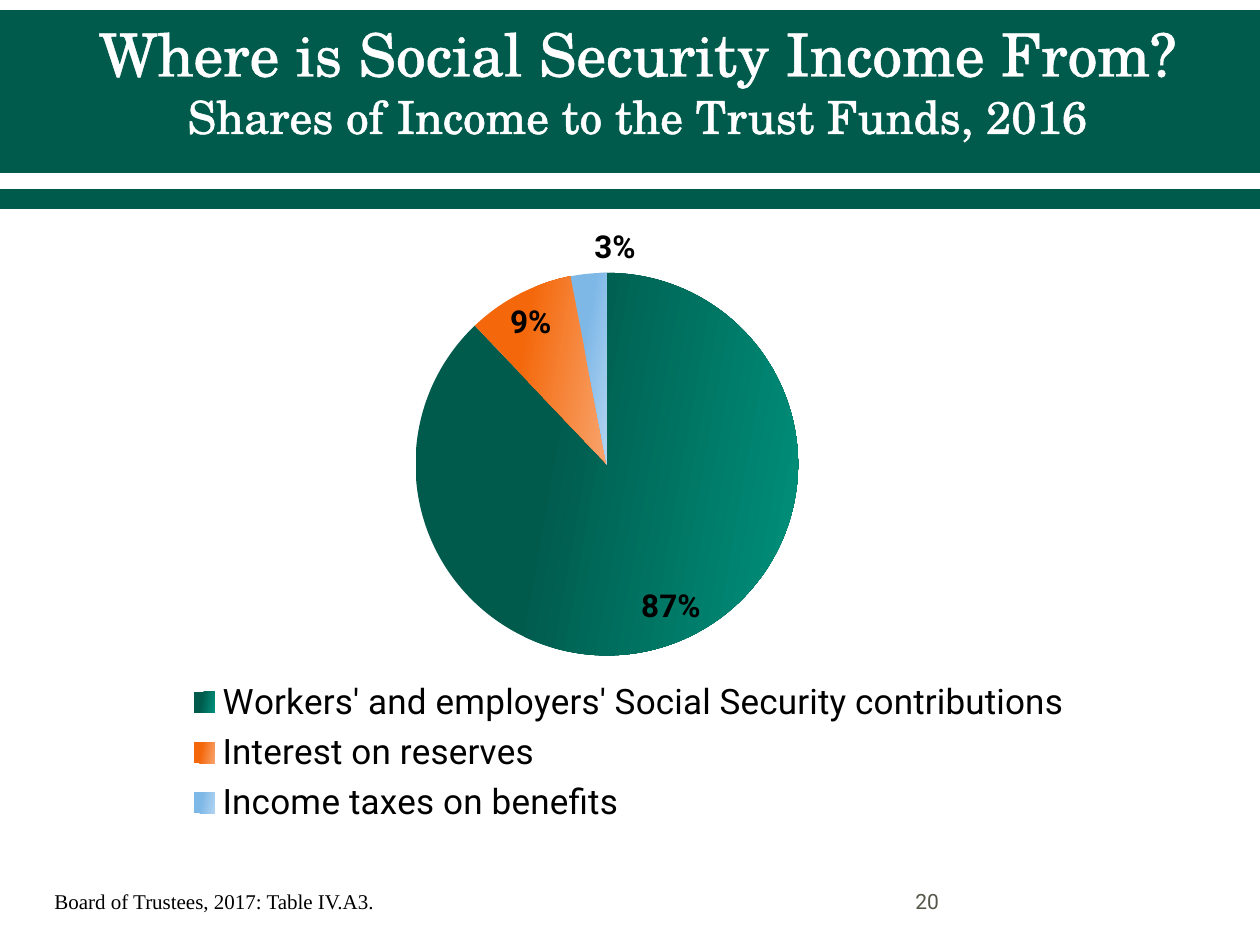
from lxml import etree
from pptx import Presentation, util as u
from pptx.chart.data import CategoryChartData
from pptx.dml.color import RGBColor
from pptx.enum import chart as charts, shapes, text
from pptx.oxml import parse_xml
from pptx.oxml.ns import nsdecls, qn

SCALE = 914400 / 126
GREEN = RGBColor(0x00, 0x5B, 0x4D)
LIGHT_GREEN = RGBColor(0x00, 0x92, 0x7D)
ORANGE = RGBColor(0xF4, 0x68, 0x0B)
LIGHT_ORANGE = RGBColor(0xF8, 0xA4, 0x6D)
BLUE = RGBColor(0x7E, 0xB8, 0xE7)
LIGHT_BLUE = RGBColor(0xB2, 0xD4, 0xF1)
WHITE = RGBColor(0xFF, 0xFF, 0xFF)
BLACK = RGBColor(0x00, 0x00, 0x00)
GREY = RGBColor(0x55, 0x55, 0x4A)
HEADING, BODY, SOURCE = "TeX Gyre Schola", "Roboto", "Times New Roman"


def px(*lengths):
    return [u.Emu(round(length * SCALE)) for length in lengths]


def style(font, size, color, name, bold=False):
    font.size, font.name, font.bold = u.Pt(size), name, bold
    font.color.rgb = color


def place(parent, index, values, inner=False):
    for layout in parent.findall(qn("c:layout")):
        parent.remove(layout)
    parts = '<c:layoutTarget val="inner"/>' if inner else ""
    if len(values) == 4:
        parts += '<c:xMode val="edge"/><c:yMode val="edge"/>'
    for tag, value in zip("xywh", values):
        parts += f'<c:{tag} val="{value}"/>'
    parent.insert(index, parse_xml(
        f'<c:layout {nsdecls("c")}><c:manualLayout>{parts}'
        "</c:manualLayout></c:layout>"))


class Deck:
    def __init__(self, width, height):
        self.file = Presentation()
        self.file.slide_width, self.file.slide_height = px(width, height)
        self.slide = self.file.slides.add_slide(self.file.slide_layouts[5])

    def bar(self, top, height):
        band = self.slide.shapes.add_shape(
            shapes.MSO_SHAPE.RECTANGLE, *px(0, top, 1260, height))
        band.shadow.inherit = False
        band.fill.solid()
        band.fill.fore_color.rgb = GREEN
        band.line.fill.background()

    def title(self, box, lines):
        heading = self.slide.shapes.title
        heading.left, heading.top, heading.width, heading.height = px(*box)
        frame = heading.text_frame
        frame.auto_size = text.MSO_AUTO_SIZE.NONE
        frame.vertical_anchor = text.MSO_ANCHOR.MIDDLE
        paragraph = frame.paragraphs[0]
        paragraph.alignment = text.PP_ALIGN.CENTER
        for number, (words, size) in enumerate(lines):
            if number:
                paragraph.add_line_break()
            run = paragraph.add_run()
            run.text = words
            style(run.font, size, WHITE, HEADING)
            outline = etree.Element(qn("a:ln"), w=str(u.Pt(1.1)))
            fill = etree.SubElement(outline, qn("a:solidFill"))
            etree.SubElement(fill, qn("a:srgbClr"), val=str(WHITE))
            run.font._element.insert(0, outline)
        self.slide.shapes._spTree.append(heading._element)

    def note(self, box, words, color, name, wrap=True):
        frame = self.slide.shapes.add_textbox(*px(*box)).text_frame
        frame.word_wrap = wrap
        frame.vertical_anchor = text.MSO_ANCHOR.MIDDLE
        run = frame.paragraphs[0].add_run()
        run.text = words
        style(run.font, 12, color, name)

    def pie(self, box, shares):
        data = CategoryChartData(number_format="0%")
        data.categories = [share[0] for share in shares]
        data.add_series("Series 1", [share[1] for share in shares])
        pie = self.slide.shapes.add_chart(
            charts.XL_CHART_TYPE.PIE, *px(*box), data).chart
        style(pie.font, 10, BLACK, BODY)
        pie.has_title = False
        pie.has_legend = True
        pie.legend.position = charts.XL_LEGEND_POSITION.BOTTOM
        pie.legend.include_in_layout = False
        style(pie.legend.font, 20, BLACK, BODY)
        place(pie.legend._element, 1, (0.04, 0.7, 0.93, 0.24))

        plot = pie.plots[0]
        plot.vary_by_categories = True
        place(pie._chartSpace.chart.plotArea, 0, (0.275, 0.095, 0.413, 0.578), inner=True)

        income = plot.series[0]
        labels = income.data_labels
        labels.show_value = True
        labels.number_format, labels.number_format_is_linked = "0%", False
        labels.position = charts.XL_LABEL_POSITION.BEST_FIT
        style(labels.font, 18, BLACK, BODY, bold=True)
        for index, (_, _, dark, light) in enumerate(shares):
            fill = income.points[index].format.fill
            fill.gradient()
            fill.gradient_angle = 350
            for stop, position, color in zip(fill.gradient_stops, (0.36, 1), (dark, light)):
                stop.position, stop.color.rgb = position, color

        smallest = income.points[len(shares) - 1].data_label
        style(smallest.font, 18, BLACK, BODY, bold=True)
        smallest.position = charts.XL_LABEL_POSITION.BEST_FIT
        place(labels._element.find(qn("c:dLbl")), 1, (0.05, 0))
        for leader in labels._element.findall(qn("c:showLeaderLines")):
            leader.set("val", "1")


def main():
    deck = Deck(1260, 945)
    for top, height in ((10, 159), (189, 20), (14, 159)):
        deck.bar(top, height)
    deck.title((50, 1, 1176, 158), [
        ("Where is Social Security Income From?", 34),
        ("Shares of Income to the Trust Funds, 2016", 26)])
    deck.note((903, 876, 294, 50), "20", GREY, BODY)
    deck.note((42, 882, 349, 38), "Board of Trustees, 2017: Table IV.A3.",
              BLACK, SOURCE, wrap=False)
    deck.pie((147, 210, 955, 662), [
        ("Workers' and employers' Social Security contributions", 0.87, GREEN, LIGHT_GREEN),
        ("Interest on reserves", 0.09, ORANGE, LIGHT_ORANGE),
        ("Income taxes on benefits", 0.03, BLUE, LIGHT_BLUE)])
    deck.file.save("out.pptx")


if __name__ == "__main__":
    main()
